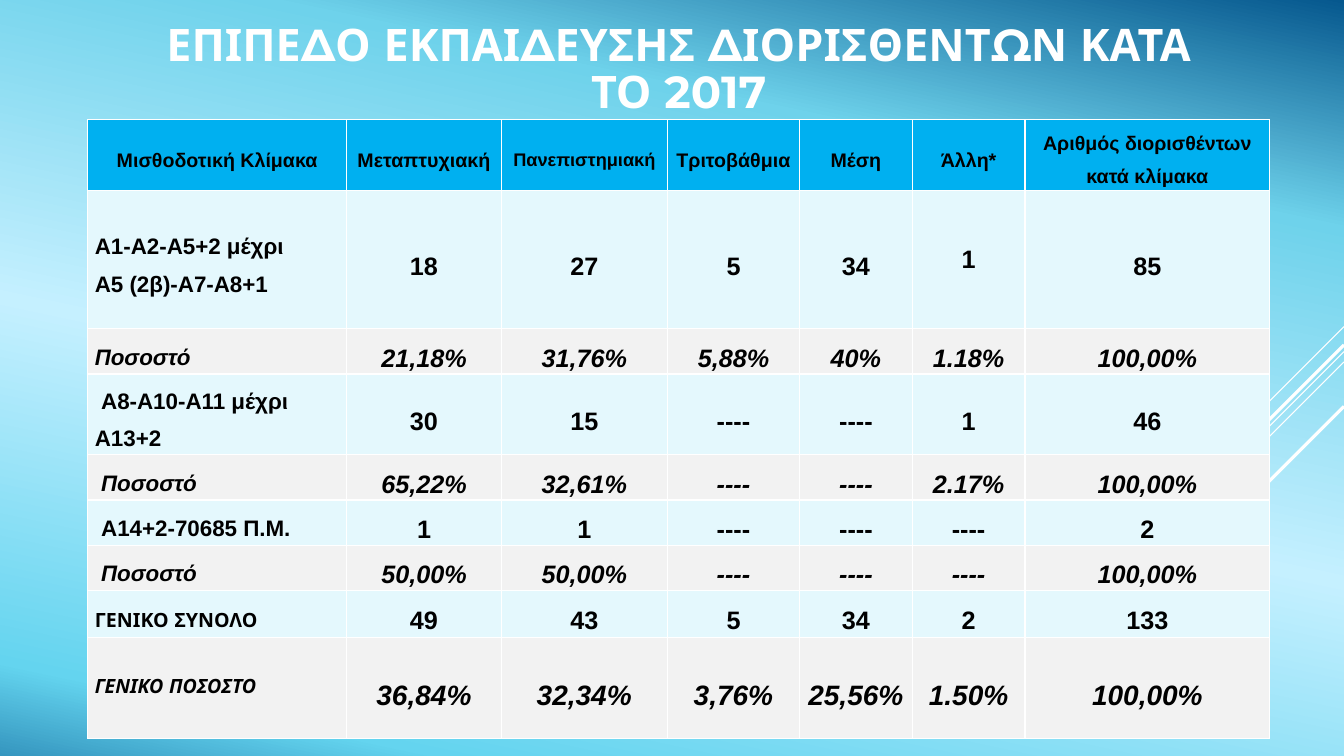
from dataclasses import dataclass

from pptx import Presentation
from pptx.dml.color import RGBColor
from pptx.enum.shapes import MSO_CONNECTOR as Connector
from pptx.enum.text import MSO_ANCHOR as Anchor, PP_ALIGN as Align
from pptx.oxml import parse_xml
from pptx.oxml.ns import nsdecls
from pptx.util import Cm, Pt


@dataclass(frozen=True)
class Theme:
    white: str = "FFFFFF"
    black: str = "000000"
    header: str = "00B0F0"
    counts: str = "E4F8FD"
    percents: str = "F2F2F2"
    sky: tuple = ((0, "06588E"), (22, "6ED2EB"), (56, "C5F0FF"),
                  (91, "64D4EF"), (100, "3596BF"))
    body_font: str = "Arial"
    title_font: str = "Montserrat"
    title_size: int = 32
    header_size: int = 14
    narrow_header_size: int = 13
    label_size: int = 16
    value_size: int = 18
    total_size: int = 20


theme = Theme()


def apply_formats(target, formats):
    for attribute, value in formats.items():
        setattr(target, attribute, value)


def write_line(paragraph, text, align, spacing, size, font, color, italic=False):
    apply_formats(paragraph, {"alignment": align, "line_spacing": spacing})
    run = paragraph.add_run()
    run.text = text
    apply_formats(run.font, {"size": Pt(size), "name": font, "bold": True, "italic": italic})
    run.font.color.rgb = RGBColor.from_string(color)


deck = Presentation()
apply_formats(deck, {"slide_width": Cm(33.87), "slide_height": Cm(19.05)})
slide = deck.slides.add_slide(deck.slide_layouts[6])

stops = "".join(f'<a:gs pos="{place * 1000}"><a:srgbClr val="{color}"/></a:gs>'
                for place, color in theme.sky)
slide.element.cSld.insert(0, parse_xml(
    f'<p:bg {nsdecls("p", "a")}><p:bgPr><a:gradFill rotWithShape="1"><a:gsLst>{stops}</a:gsLst>'
    '<a:lin ang="6120000" scaled="1"/></a:gradFill><a:effectLst/></p:bgPr></p:bg>'))

right_edge = 33.87
for top, reach, width in [(8.23, 2.54, 0.75), (8.86, 8.28, 0.75), (9.12, 5.27, 0.75),
                          (8.69, 4.85, 2.25), (10.24, 3.53, 2.25)]:
    ray = slide.shapes.add_connector(Connector.STRAIGHT, Cm(right_edge), Cm(top),
                                     Cm(right_edge - reach), Cm(top + reach))
    ray.line.width = Pt(width)
    ray.line.color.rgb = RGBColor.from_string(theme.white)
    ray.element.spPr.append(parse_xml(f'<a:effectLst {nsdecls("a")}/>'))

title = slide.shapes.add_textbox(Cm(3.05), Cm(0.23), Cm(28.12), Cm(3.1)).text_frame
apply_formats(title, {"word_wrap": True, "vertical_anchor": Anchor.MIDDLE})
write_line(title.paragraphs[0], "ΕΠΙΠΕΔΟ ΕΚΠΑΙΔΕΥΣΗΣ ΔΙΟΡΙΣΘΕΝΤΩΝ ΚΑΤΑ ΤΟ 2017", Align.CENTER,
           0.88, theme.title_size, theme.title_font, theme.white)

column_widths = [6.53, 3.89, 4.19, 3.33, 2.84, 2.84, 6.17]
headings = ["Μισθοδοτική Κλίμακα", "Μεταπτυχιακή", "Πανεπιστημιακή", "Τριτοβάθμια",
            "Μέση", "Άλλη*", "Αριθμός διορισθέντων κατά κλίμακα"]
grades = [
    (3.48, "Α1-Α2-Α5+2 μέχρι\nΑ5 (2β)-Α7-Α8+1", 0, ["18", "27", "5", "34", "1", "85"]),
    (1.07, "Ποσοστό", 0, ["21,18%", "31,76%", "5,88%", "40%", "1.18%", "100,00%"]),
    (1.93, "Α8-Α10-Α11 μέχρι Α13+2", 0.16, ["30", "15", "----", "----", "1", "46"]),
    (1.07, "Ποσοστό", 0.16, ["65,22%", "32,61%", "----", "----", "2.17%", "100,00%"]),
    (1.07, "Α14+2-70685 Π.Μ.", 0.16, ["1", "1", "----", "----", "----", "2"]),
    (1.07, "Ποσοστό", 0.16, ["50,00%", "50,00%", "----", "----", "----", "100,00%"]),
    (1.18, "ΓΕΝΙΚΟ ΣΥΝΟΛΟ", 0, ["49", "43", "5", "34", "2", "133"]),
    (2.54, "ΓΕΝΙΚΟ ΠΟΣΟΣΤΟ", 0, ["36,84%", "32,34%", "3,76%", "25,56%", "1.50%", "100,00%"]),
]
rows = [(1.65, headings[0], 0, headings[1:])] + grades
education = slide.shapes.add_table(len(rows), len(column_widths), Cm(2.21), Cm(3.02),
                                   Cm(sum(column_widths)), Cm(sum(row[0] for row in rows))).table
apply_formats(education, {"first_row": False, "horz_banding": False})
for column, width in zip(education.columns, column_widths):
    column.width = Cm(width)

cell_format = {"vertical_anchor": Anchor.MIDDLE, "margin_left": Cm(0.18), "margin_right": Cm(0.18),
               "margin_top": 0, "margin_bottom": 0}
for r, (height, label, indent, values) in enumerate(rows):
    education.rows[r].height = Cm(height)
    is_header = r == 0
    is_percent = r > 0 and r % 2 == 0
    is_total = r >= len(rows) - 2
    fill = theme.header if is_header else theme.percents if is_percent else theme.counts
    for c, text in enumerate([label] + values):
        cell = education.cell(r, c)
        apply_formats(cell, cell_format)
        cell.fill.solid()
        cell.fill.fore_color.rgb = RGBColor.from_string(fill)
        is_label = c == 0 and not is_header
        if is_header:
            size = theme.narrow_header_size if c == 2 else theme.header_size
        elif is_label:
            size = theme.header_size if is_total else theme.label_size
        else:
            size = theme.total_size if r == len(rows) - 1 else theme.value_size
        font = theme.title_font if is_label and is_total else theme.body_font
        for n, line in enumerate(text.split("\n")):
            paragraph = cell.text_frame.paragraphs[0] if n == 0 else cell.text_frame.add_paragraph()
            write_line(paragraph, line, Align.LEFT if is_label else Align.CENTER,
                       1.5, size, font, theme.black, is_percent)
            if is_label and indent:
                paragraph._p.get_or_add_pPr().set("indent", str(Cm(indent)))
        properties = cell._tc.get_or_add_tcPr()
        for position, side in enumerate(["lnL", "lnR", "lnT", "lnB"]):
            properties.insert(position, parse_xml(
                f'<a:{side} {nsdecls("a")} w="12700"><a:solidFill>'
                f'<a:srgbClr val="{theme.white}"/></a:solidFill></a:{side}>'))

education.cell(1, 5).margin_bottom = Cm(0.36)
education.cell(len(rows) - 1, 0).margin_bottom = Cm(0.36)

deck.save("out.pptx")
